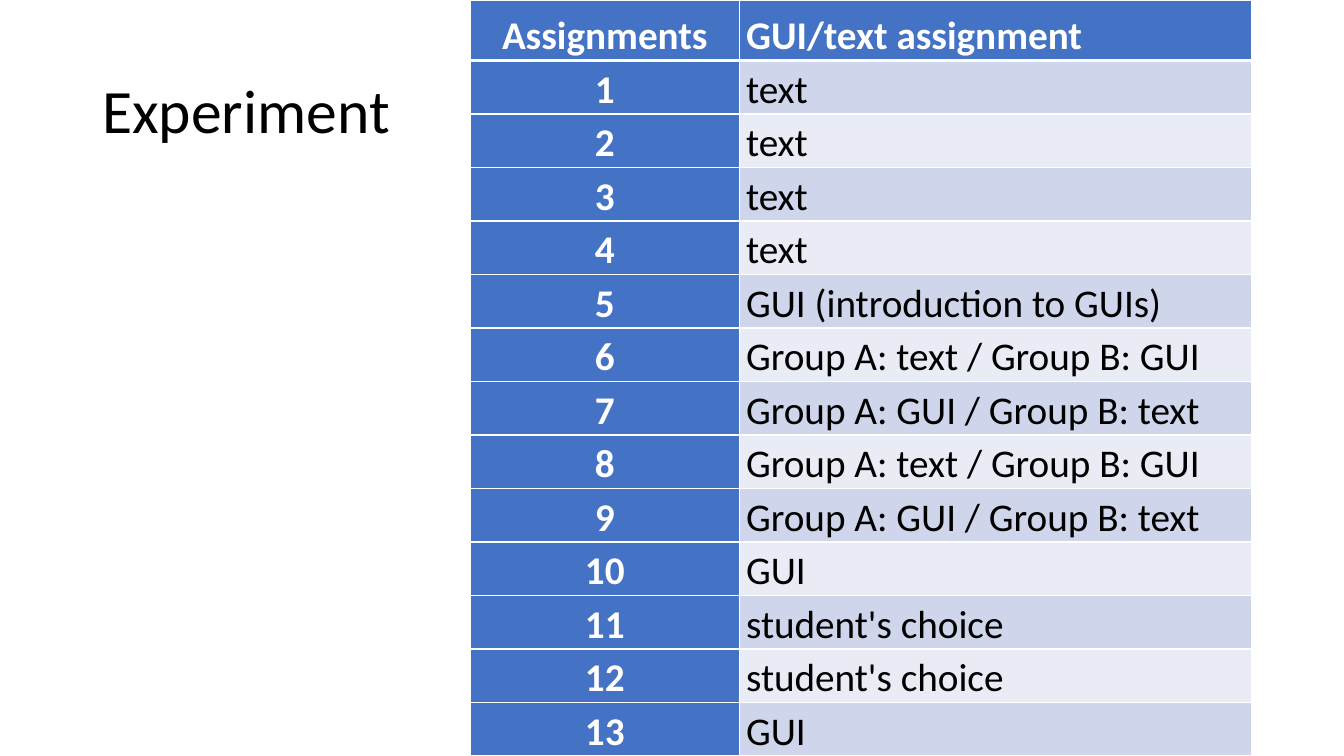
from lxml.etree import SubElement
from pptx import Presentation
from pptx.dml.color import RGBColor
from pptx.enum.text import MSO_ANCHOR as Anchor, PP_ALIGN as Align
from pptx.oxml.ns import qn
from pptx.util import Pt

BLUE = RGBColor(0x44, 0x72, 0xC4)
BAND_DARK = RGBColor(0xCF, 0xD5, 0xEA)
BAND_LIGHT = RGBColor(0xE9, 0xEB, 0xF5)
WHITE = RGBColor(0xFF, 0xFF, 0xFF)
BLACK = RGBColor(0, 0, 0)
FONT = "Calibri"

HEADER = ("Assignments", "GUI/text assignment")
A_TEXT = "Group A: text / Group B: GUI"
A_GUI = "Group A: GUI / Group B: text"
KINDS = (["text"] * 4 + ["GUI (introduction to GUIs)"] + [A_TEXT, A_GUI] * 2
         + ["GUI"] + ["student's choice"] * 2 + ["GUI"])


def write(p, text, size, color, bold=False):
    p.text = text
    for r in p.runs:
        r.font.name, r.font.size = FONT, Pt(size)
        r.font.color.rgb, r.font.bold = color, bold


def add_title(s, text, left, top, width, height):
    tf = s.shapes.add_textbox(Pt(left), Pt(top), Pt(width), Pt(height)).text_frame
    tf.word_wrap = True
    tf.vertical_anchor = Anchor.MIDDLE
    p = tf.paragraphs[0]
    p.line_spacing = 0.9
    write(p, text, 44, BLACK)


def set_borders(cell, bottom, top):
    """Draw white cell borders; they must come before the fill in the XML."""
    tc_pr = cell._tc.get_or_add_tcPr()
    widths = {"a:lnL": 1, "a:lnR": 1, "a:lnT": top, "a:lnB": bottom}
    for i, (tag, width) in enumerate(widths.items()):
        ln = SubElement(tc_pr, qn(tag), w=str(Pt(width)))
        fill = SubElement(ln, qn("a:solidFill"))
        SubElement(fill, qn("a:srgbClr"), val=str(WHITE))
        tc_pr.insert(i, ln)


def add_assignments(s, left, top, width, height):
    rows = [HEADER] + [(str(n), kind) for n, kind in enumerate(KINDS, 1)]
    table = s.shapes.add_table(len(rows), 2, Pt(left), Pt(top),
                               Pt(width), Pt(height)).table
    number_width, header_height = 192, 43.2
    table.columns[0].width = Pt(number_width)
    table.columns[1].width = Pt(width - number_width)
    row_height = (height - header_height) / len(KINDS)
    for i, texts in enumerate(rows):
        table.rows[i].height = Pt(row_height if i else header_height)
        for j, text in enumerate(texts):
            cell = table.cell(i, j)
            strong = i == 0 or j == 0
            band = BAND_DARK if i % 2 else BAND_LIGHT
            cell.fill.solid()
            cell.fill.fore_color.rgb = BLUE if strong else band
            cell.vertical_anchor = Anchor.BOTTOM
            cell.margin_left = cell.margin_right = Pt(5)
            cell.margin_top = cell.margin_bottom = 0
            set_borders(cell, bottom=1 if i else 3, top=3 if i == 1 else 1)
            p = cell.text_frame.paragraphs[0]
            p.alignment = Align.LEFT if j else Align.CENTER
            write(p, text, 28, WHITE if strong else BLACK, strong)


def main():
    prs = Presentation()
    prs.slide_width, prs.slide_height = Pt(960), Pt(540)
    s = prs.slides.add_slide(prs.slide_layouts[6])
    add_title(s, "Experiment", 66, 28.75, 828, 104.4)
    add_assignments(s, 336, 0, 558, 540)
    prs.save("out.pptx")


if __name__ == "__main__":
    main()
